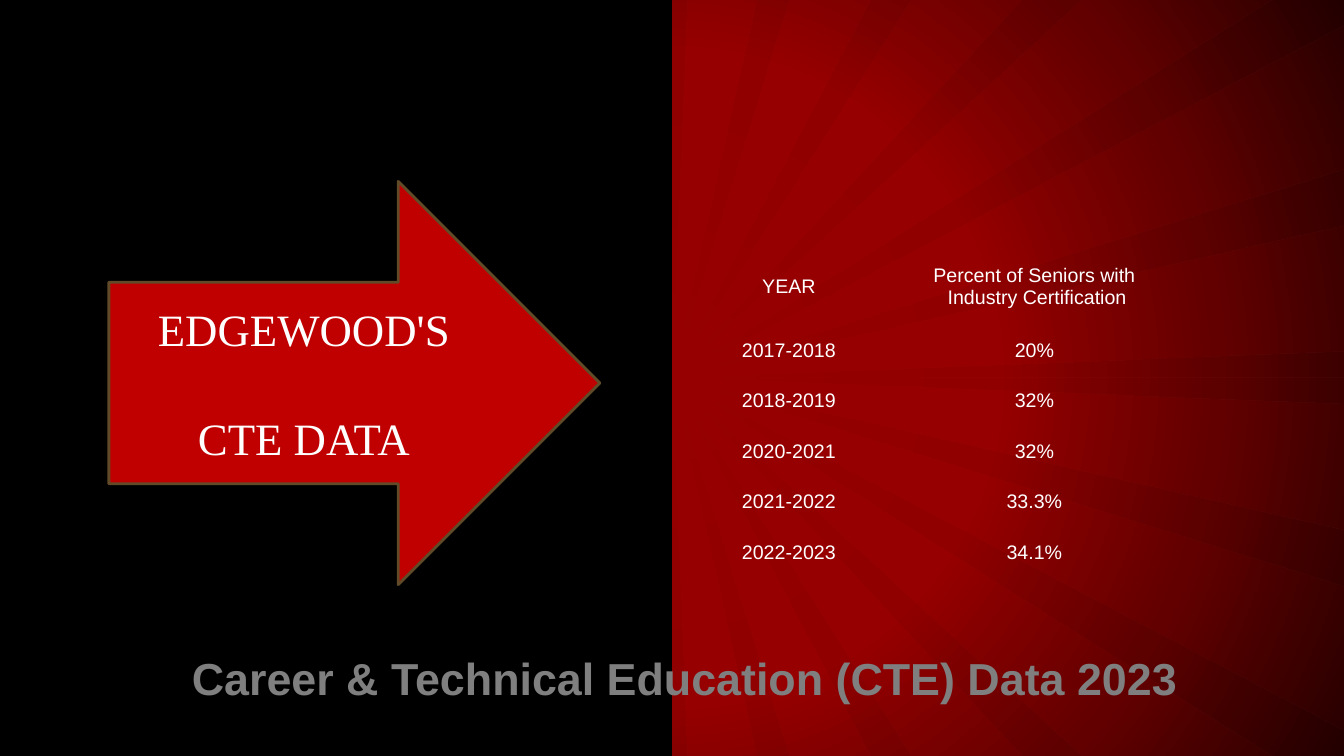
from itertools import product

from pptx import Presentation
from pptx.dml.color import RGBColor
from pptx.enum.shapes import MSO_SHAPE as Preset
from pptx.enum.text import MSO_ANCHOR as Anchor, PP_ALIGN as Align
from pptx.oxml import parse_xml
from pptx.oxml.ns import nsdecls, qn
from pptx.util import Inches, Pt

ARROW_LINES = ["EDGEWOOD'S", "CTE DATA"]
ROWS = [
    ("YEAR", "Percent of Seniors with\n Industry Certification"),
    ("2017-2018", "20%"),
    ("2018-2019", "32%"),
    ("2020-2021", "32%"),
    ("2021-2022", "33.3%"),
    ("2022-2023", "34.1%"),
]
TITLE = "Career & Technical Education (CTE) Data 2023"

COLORS = {
    "black": "000000",
    "white": "FFFFFF",
    "arrow": "C00000",
    "outline": "614A27",
    "title": "7F7F7F",
    "glow": "960000",
    "dusk": "620000",
    "edge": "260000",
}
BACKGROUND_STOPS = [(0, "glow", 100), (42, "glow", 100), (71, "dusk", 100), (100, "edge", 100)]
RAY_STOPS = [(0, "black", 0), (100, "black", 9)]

WIDTH, HEIGHT = 13.33, 7.5
CENTER_X, CENTER_Y = WIDTH / 2, HEIGHT / 2
UPRIGHT_RAYS = [(-0.15, 0.15), (0.84, 1.16), (1.97, 2.37), (3.47, 4.06)]
SIDE_RAYS = [(-0.26, 0.26), (1.51, 2.07)]
CORNER_X, CORNER_Y = 5.95, 3.5
COLUMN_WIDTHS = [1.61, 3.26]
HEADER_HEIGHT, ROW_HEIGHT = 0.77, 0.5
NO_STYLE_ID = "{2D5ABB26-0587-4C30-8999-92F81FD0307C}"


def color(name):
    return RGBColor.from_string(COLORS[name])


def use_radial_gradient(properties, stops):
    stop_xml = "".join(
        f'<a:gs pos="{position * 1000}"><a:srgbClr val="{COLORS[name]}">'
        f'<a:alpha val="{alpha * 1000}"/></a:srgbClr></a:gs>'
        for position, name, alpha in stops
    )
    gradient = parse_xml(
        f'<a:gradFill {nsdecls("a")} rotWithShape="1"><a:gsLst>{stop_xml}</a:gsLst>'
        '<a:path path="circle"><a:fillToRect l="50000" t="50000" r="50000" b="50000"/>'
        "</a:path></a:gradFill>"
    )
    solid = properties.find(qn("a:solidFill"))
    properties.replace(solid, gradient)


def style_text(frame, lines, size, font_name, color_name, bold=False):
    frame.text = "\n".join(lines)
    for paragraph in frame.paragraphs:
        paragraph.alignment = Align.CENTER
        paragraph.font.size = Pt(size)
        paragraph.font.name = font_name
        paragraph.font.bold = bold
        paragraph.font.color.rgb = color(color_name)


def ray_outlines():
    for x_side, y_side in product((1, -1), repeat=2):
        corner = [(CORNER_X, CENTER_Y), (CENTER_X, CENTER_Y), (CENTER_X, CORNER_Y)]
        yield [(x * x_side, y * y_side) for x, y in corner]
        for start, end in UPRIGHT_RAYS:
            if start > 0 or x_side > 0:
                yield [(start * x_side, CENTER_Y * y_side), (end * x_side, CENTER_Y * y_side)]
        for start, end in SIDE_RAYS:
            if start > 0 or y_side > 0:
                yield [(CENTER_X * x_side, start * y_side), (CENTER_X * x_side, end * y_side)]


def add_rays(slide):
    hub = (Inches(CENTER_X), Inches(CENTER_Y))
    builder = slide.shapes.build_freeform(*hub)
    for index, outline in enumerate(ray_outlines()):
        if index:
            builder.move_to(*hub)
        points = [(Inches(CENTER_X + x), Inches(CENTER_Y + y)) for x, y in outline]
        builder.add_line_segments(points, close=True)
    rays = builder.convert_to_shape()
    rays.shadow.inherit = False
    rays.line.fill.background()
    rays.fill.solid()
    use_radial_gradient(rays._element.spPr, RAY_STOPS)


def add_preset(slide, preset, box, fill):
    shape = slide.shapes.add_shape(preset, *map(Inches, box))
    shape.shadow.inherit = False
    shape.fill.solid()
    shape.fill.fore_color.rgb = color(fill)
    shape.line.fill.background()
    return shape


def add_arrow(slide):
    arrow = add_preset(slide, Preset.RIGHT_ARROW, (1.08, 1.8, 4.87, 4), "arrow")
    arrow.line.color.rgb = color("outline")
    arrow.line.width = Pt(2)
    arrow.text_frame.vertical_anchor = Anchor.MIDDLE
    style_text(arrow.text_frame, ARROW_LINES, 32, "Times New Roman", "white")
    arrow.text_frame.paragraphs[1].space_before = Pt(40)


def add_data_table(slide):
    heights = [HEADER_HEIGHT] + [ROW_HEIGHT] * (len(ROWS) - 1)
    box = (7.02, 2.46, sum(COLUMN_WIDTHS), sum(heights))
    table = slide.shapes.add_table(len(ROWS), len(COLUMN_WIDTHS), *map(Inches, box)).table
    table.first_row = False
    table.horz_banding = False
    table._tbl.tblPr.find(qn("a:tableStyleId")).text = NO_STYLE_ID
    for column, width in zip(table.columns, COLUMN_WIDTHS):
        column.width = Inches(width)
    for row, height, values in zip(table.rows, heights, ROWS):
        row.height = Inches(height)
        for cell, value in zip(row.cells, values):
            cell.fill.background()
            cell.vertical_anchor = Anchor.MIDDLE
            style_text(cell.text_frame, value.split("\n"), 14, "Arial", "white")


def add_title(slide):
    title = slide.shapes.add_textbox(*map(Inches, (1.36, 6.4, 10.87, 0.64)))
    title.text_frame.word_wrap = True
    title.text_frame.vertical_anchor = Anchor.MIDDLE
    style_text(title.text_frame, [TITLE], 32, "Arial", "title", bold=True)


def main():
    presentation = Presentation()
    presentation.slide_width = Inches(WIDTH)
    presentation.slide_height = Inches(HEIGHT)
    slide = presentation.slides.add_slide(presentation.slide_layouts[6])
    slide.background.fill.solid()
    use_radial_gradient(slide._element.cSld.bg.bgPr, BACKGROUND_STOPS)
    add_rays(slide)
    add_preset(slide, Preset.RECTANGLE, (0, 0, CENTER_X, HEIGHT), "black")
    add_arrow(slide)
    add_data_table(slide)
    add_title(slide)
    presentation.save("out.pptx")


if __name__ == "__main__":
    main()
